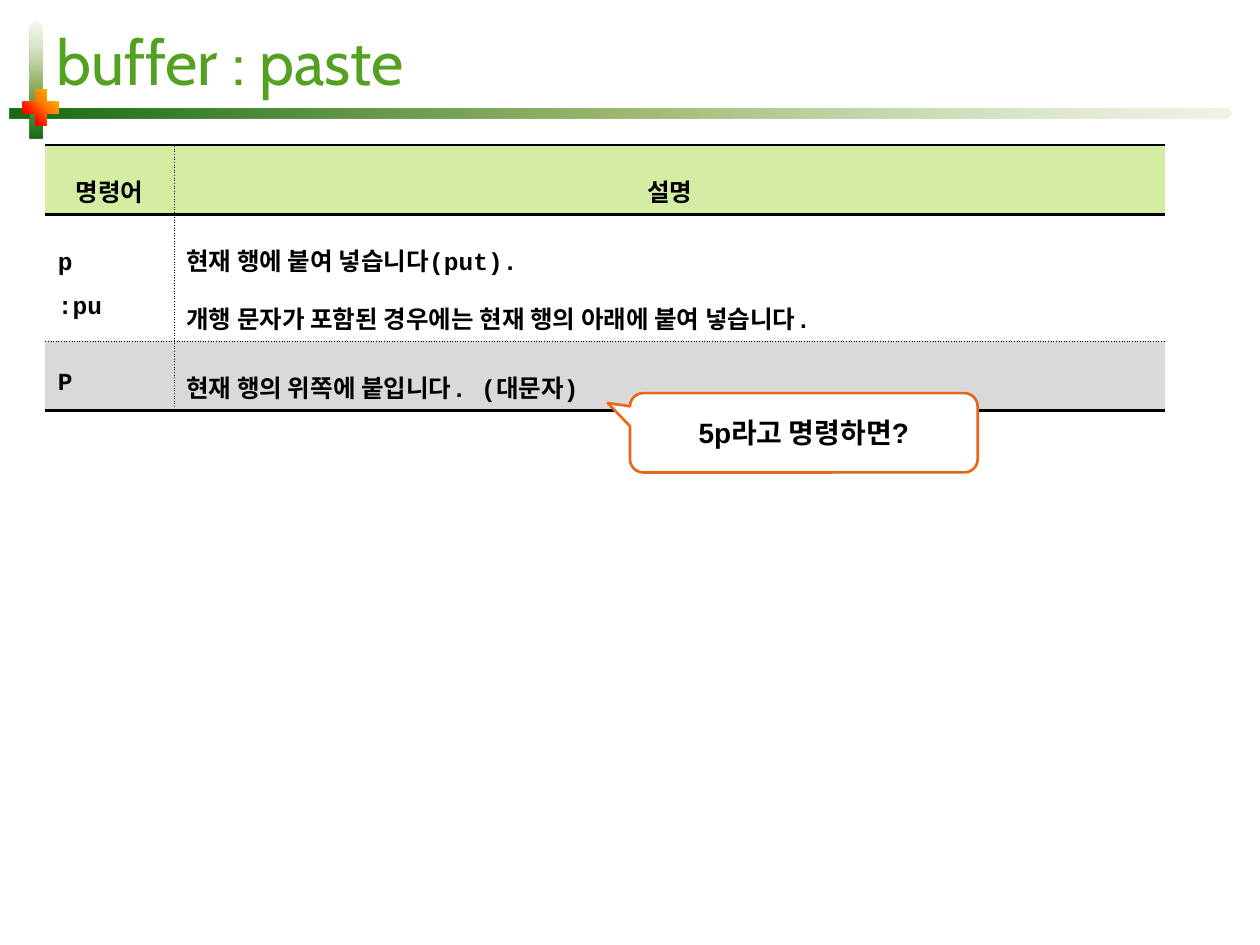
from dataclasses import dataclass
from typing import NamedTuple, Optional

from lxml import etree
from pptx import Presentation
from pptx.dml.color import RGBColor
from pptx.enum.shapes import MSO_SHAPE
from pptx.enum.text import MSO_ANCHOR, PP_ALIGN
from pptx.oxml.ns import qn
from pptx.util import Inches, Pt

PENTAGON, PLUS = MSO_SHAPE.PENTAGON, MSO_SHAPE.MATH_PLUS
CALLOUT = MSO_SHAPE.ROUNDED_RECTANGULAR_CALLOUT
LEFT, CENTER = PP_ALIGN.LEFT, PP_ALIGN.CENTER
MIDDLE = MSO_ANCHOR.MIDDLE


@dataclass(frozen=True)
class Theme:
    title_font: str = "Cabin"
    table_font: str = "Courier New"
    callout_font: str = "Arial"
    title_size: float = 36
    table_size: float = 14
    callout_size: float = 16
    title: str = "54A021"
    ink: str = "000000"
    paper: str = "FFFFFF"
    header: str = "D5EDA2"
    shade: str = "D9D9D9"
    accent: str = "E76618"


class Stop(NamedTuple):
    position: int
    color: str
    opacity: int = 100


class Ornament(NamedTuple):
    preset: int
    box: tuple
    stops: list
    angle: int
    rotation: int = 0


class Row(NamedTuple):
    height: float
    cells: list
    fill: Optional[str] = None
    alignment: int = LEFT


class Border(NamedTuple):
    width: float
    dash: str = "solid"


THEME = Theme()
SOLID, DOTTED = Border(1.7), Border(0.28, "sysDot")


def bar_stops(end_opacity: int) -> list:
    return [Stop(0, "DDEBCF", end_opacity), Stop(50, "9CB86E"), Stop(100, "156B13")]


ORNAMENTS = [
    Ornament(PENTAGON, (0.08, 0.86, 9.69, 0.08), bar_stops(50), 180),
    Ornament(PENTAGON, (-0.18, 0.58, 0.93, 0.1), bar_stops(30), 180, 270),
    Ornament(PLUS, (0.13, 0.66, 0.39, 0.39),
             [Stop(0, "FFF200"), Stop(45, "FF7A00"), Stop(70, "FF0300"), Stop(100, "4D0808")], 135),
]
COLUMN_WIDTHS = [1.02, 7.87]
ROWS = [
    Row(0.55, [["명령어"], ["설명"]], THEME.header, CENTER),
    Row(1.01, [["p", ":pu"], ["현재 행에 붙여 넣습니다(put).",
                              "개행 문자가 포함된 경우에는 현재 행의 아래에 붙여 넣습니다."]]),
    Row(0.55, [["P"], ["현재 행의 위쪽에 붙입니다. (대문자)"]], THEME.shade),
]
# Horizontal rules from the top of the table to the bottom
RULES = [SOLID, SOLID, DOTTED, SOLID]


def write_text(text_frame, lines: list, *, font: str, size: float, color: str = THEME.ink,
               bold: bool = True, alignment: int = LEFT, line_spacing: float = 1.0,
               space: float = 0) -> None:
    text_frame.vertical_anchor = MIDDLE
    for index, line in enumerate(lines):
        paragraph = text_frame.add_paragraph() if index else text_frame.paragraphs[0]
        paragraph.alignment = alignment
        paragraph.line_spacing = line_spacing
        paragraph.space_before = paragraph.space_after = Pt(space)
        run = paragraph.add_run()
        run.text = line
        run.font.name, run.font.size, run.font.bold = font, Pt(size), bold
        run.font.color.rgb = RGBColor.from_string(color)


def set_gradient(shape, stops: list, angle: int) -> None:
    shape.fill.gradient()
    gradient = shape.fill._xPr.find(qn("a:gradFill"))
    stop_list = gradient.find(qn("a:gsLst"))
    for old_stop in list(stop_list):
        stop_list.remove(old_stop)
    for stop in stops:
        node = etree.SubElement(stop_list, qn("a:gs"), pos=str(stop.position * 1000))
        color = etree.SubElement(node, qn("a:srgbClr"), val=stop.color)
        if stop.opacity < 100:
            etree.SubElement(color, qn("a:alpha"), val=str(stop.opacity * 1000))
    line = gradient.find(qn("a:lin"))
    line.set("ang", str(angle * 60000))
    line.set("scaled", "0")


def add_ornament(slide, ornament: Ornament) -> None:
    shape = slide.shapes.add_shape(ornament.preset, *map(Inches, ornament.box))
    shape.shadow.inherit = False
    shape.rotation = ornament.rotation
    shape.line.fill.background()
    set_gradient(shape, ornament.stops, ornament.angle)


def set_border(cell, side: str, border: Optional[Border]) -> None:
    properties = cell._tc.get_or_add_tcPr()
    line = etree.SubElement(properties, qn(f"a:ln{side}"))
    if border is None:
        etree.SubElement(line, qn("a:noFill"))
        return
    line.set("w", str(Pt(border.width)))
    fill = etree.SubElement(line, qn("a:solidFill"))
    etree.SubElement(fill, qn("a:srgbClr"), val=THEME.ink)
    etree.SubElement(line, qn("a:prstDash"), val=border.dash)


def add_command_table(slide, left: float, top: float) -> None:
    width, height = sum(COLUMN_WIDTHS), sum(row.height for row in ROWS)
    table = slide.shapes.add_table(len(ROWS), len(COLUMN_WIDTHS), Inches(left), Inches(top),
                                   Inches(width), Inches(height)).table
    table.first_row = table.horz_banding = False
    for column, column_width in zip(table.columns, COLUMN_WIDTHS):
        column.width = Inches(column_width)
    last_column = len(COLUMN_WIDTHS) - 1
    for row_index, row in enumerate(ROWS):
        table.rows[row_index].height = Inches(row.height)
        for column_index, lines in enumerate(row.cells):
            cell = table.cell(row_index, column_index)
            # Borders must precede the fill
            set_border(cell, "L", DOTTED if column_index else None)
            set_border(cell, "R", DOTTED if column_index < last_column else None)
            set_border(cell, "T", RULES[row_index])
            set_border(cell, "B", RULES[row_index + 1])
            if row.fill:
                cell.fill.solid()
                cell.fill.fore_color.rgb = RGBColor.from_string(row.fill)
            else:
                cell.fill.background()
            cell.vertical_anchor = MIDDLE
            write_text(cell.text_frame, lines, font=THEME.table_font, size=THEME.table_size,
                       alignment=row.alignment, line_spacing=1.6)


def add_title(slide, text: str) -> None:
    box = slide.shapes.add_textbox(Inches(0.35), Inches(0.1), Inches(9.41), Inches(0.76))
    box.text_frame.word_wrap = True
    write_text(box.text_frame, [text], font=THEME.title_font, size=THEME.title_size,
               color=THEME.title, bold=False)


def add_callout(slide, text: str) -> None:
    shape = slide.shapes.add_shape(CALLOUT, Inches(5), Inches(3.12), Inches(2.76), Inches(0.63))
    shape.shadow.inherit = False
    for index, value in enumerate((-0.564, -0.375, 0.167)):
        shape.adjustments[index] = value
    shape.fill.solid()
    shape.fill.fore_color.rgb = RGBColor.from_string(THEME.paper)
    shape.line.color.rgb = RGBColor.from_string(THEME.accent)
    shape.line.width = Pt(1.5)
    shape.text_frame.word_wrap = False
    write_text(shape.text_frame, [text], font=THEME.callout_font, size=THEME.callout_size,
               alignment=CENTER, space=3.2)


def main() -> None:
    presentation = Presentation()
    presentation.slide_width, presentation.slide_height = Inches(10), Inches(7.5)
    slide = presentation.slides.add_slide(presentation.slide_layouts[6])
    for ornament in ORNAMENTS:
        add_ornament(slide, ornament)
    add_title(slide, "buffer : paste")
    add_command_table(slide, 0.36, 1.15)
    add_callout(slide, "5p라고 명령하면?")
    presentation.save("out.pptx")


if __name__ == "__main__":
    main()
